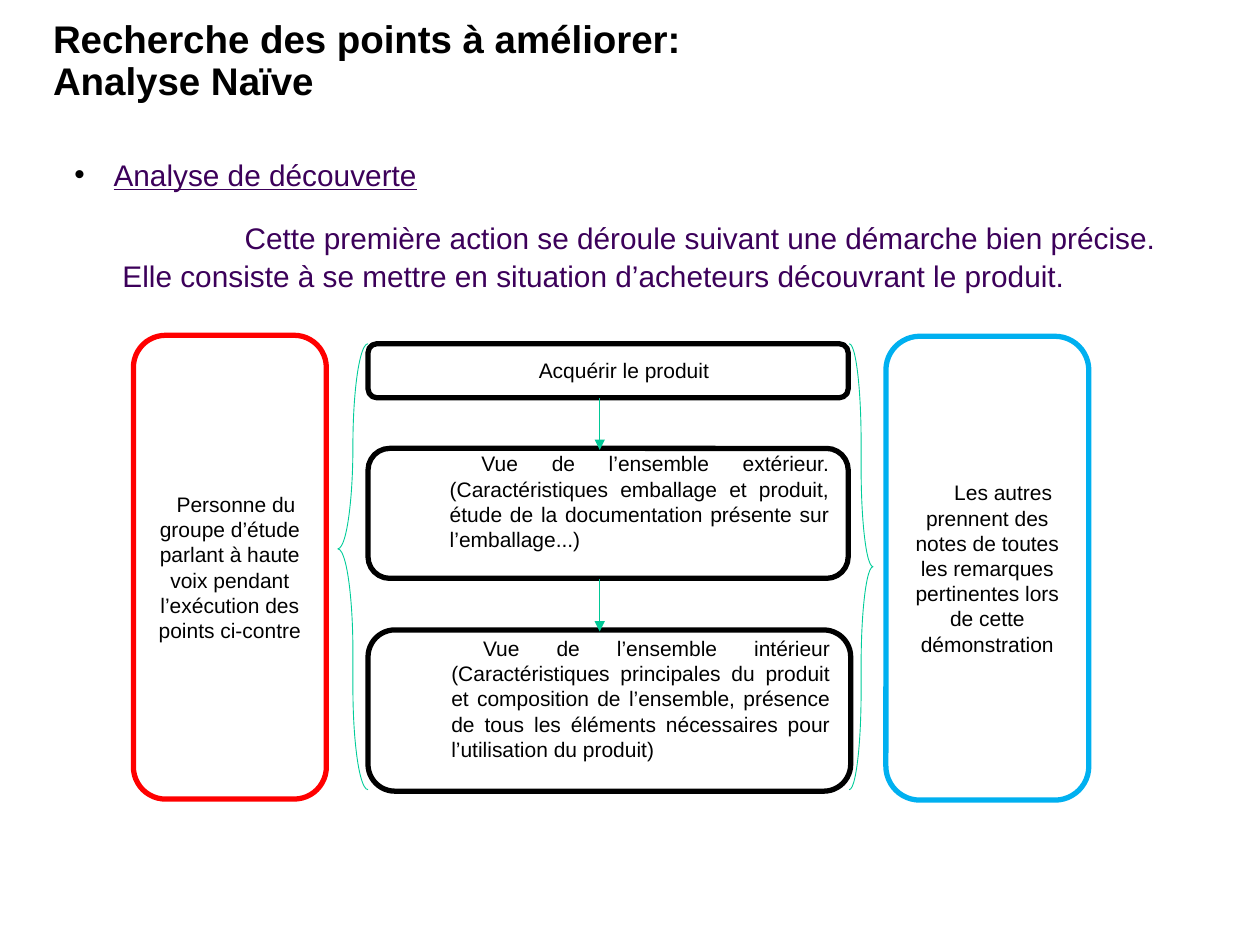
from dataclasses import dataclass
from typing import Any

from lxml import etree
from pptx import Presentation
from pptx.dml.color import RGBColor
from pptx.enum.shapes import MSO_CONNECTOR, MSO_SHAPE
from pptx.enum.text import MSO_ANCHOR, PP_ALIGN
from pptx.oxml.ns import qn
from pptx.util import Cm, Pt

ROUND = MSO_SHAPE.ROUNDED_RECTANGLE
LEFT_BRACE, RIGHT_BRACE = MSO_SHAPE.LEFT_BRACE, MSO_SHAPE.RIGHT_BRACE
STRAIGHT = MSO_CONNECTOR.STRAIGHT
TOP, MIDDLE = MSO_ANCHOR.TOP, MSO_ANCHOR.MIDDLE
LEFT, CENTER, JUSTIFY = PP_ALIGN.LEFT, PP_ALIGN.CENTER, PP_ALIGN.JUSTIFY


@dataclass(frozen=True)
class Theme:
    """Colours, type sizes and line widths of the slide."""
    font: str = "Arial"
    ink: str = "000000"
    paper: str = "FFFFFF"
    body: str = "3C005A"
    speaker: str = "FF0000"
    listeners: str = "00B0F0"
    brace: str = "00CC99"
    arrow: str = "00C896"
    title_pt: float = 22
    body_pt: float = 17
    box_pt: float = 12
    box_line: float = 3
    brace_line: float = 0.5
    arrow_line: float = 0.75


@dataclass(frozen=True)
class Area:
    """A rectangle in centimetres."""
    left: float
    top: float
    width: float
    height: float

    def lengths(self) -> list[Cm]:
        """Return the rectangle as slide lengths."""
        return [Cm(v) for v in (self.left, self.top, self.width, self.height)]


@dataclass(frozen=True)
class Box:
    """A rounded box with its text layout."""
    area: Area
    text: str
    line: str
    align: Any = CENTER
    margin: float = 0
    indent: float = 0.64
    bottom: float = 0.13


@dataclass(frozen=True)
class Brace:
    """A brace beside the steps."""
    kind: Any
    area: Area
    curl: float
    point: float


@dataclass(frozen=True)
class Arrow:
    """A vertical arrow between two steps."""
    x: float
    top: float
    bottom: float


T = Theme()
STEP_X, STEP_W, STEPS_TOP, STEPS_H = 7.42, 9.68, 6.93, 8.99
STEP_TEXT = dict(line=T.ink, align=JUSTIFY, margin=1.27, bottom=0.61)

BOXES = [
    Box(Area(STEP_X, STEPS_TOP, STEP_W, 1.09), "Acquérir le produit", T.ink),
    Box(Area(STEP_X, 9.04, STEP_W, 2.62),
        "Vue de l’ensemble extérieur. (Caractéristiques emballage et produit, "
        "étude de la documentation présente sur l’emballage...)", **STEP_TEXT),
    Box(Area(STEP_X, 12.7, 9.73, 3.25),
        "Vue de l’ensemble intérieur (Caractéristiques principales du produit et "
        "composition de l’ensemble, présence de tous les éléments nécessaires pour "
        "l’utilisation du produit)", **STEP_TEXT),
    Box(Area(2.69, 6.76, 3.89, 9.35),
        "Personne du groupe d’étude parlant à haute voix pendant l’exécution des "
        "points ci-contre", T.speaker, indent=0.25),
    Box(Area(17.86, 6.78, 4.09, 9.35),
        "Les autres prennent des notes de toutes les remarques pertinentes lors de "
        "cette démonstration", T.listeners),
]
BRACES = [
    Brace(LEFT_BRACE, Area(6.81, STEPS_TOP, 0.61, STEPS_H), 4.09, 0.46),
    Brace(RIGHT_BRACE, Area(17.12, STEPS_TOP, 0.48, STEPS_H), 4.15, 0.5),
]
ARROWS = [Arrow(12.09, 8.03, 9.07), Arrow(12.09, 11.68, 12.73)]


def apply(target: Any, values: dict[str, Any]) -> None:
    """Set each named attribute on the target."""
    for name, value in values.items():
        setattr(target, name, value)


def write(p: Any, text: str, size: float, color: str, layout: dict[str, Any],
          **style: Any) -> None:
    """Fill a paragraph with formatted text."""
    p.text = text
    apply(p, layout)
    for r in p.runs:
        apply(r.font, {"name": T.font, "size": Pt(size), **style})
        r.font.color.rgb = RGBColor.from_string(color)


def indent(p: Any, margin: float, first: float) -> None:
    """Set the left margin and first-line indent of a paragraph."""
    pPr = p._p.get_or_add_pPr()
    pPr.set("marL", str(Cm(margin)))
    pPr.set("indent", str(Cm(first)))


def add_bullet(p: Any) -> None:
    """Give a paragraph a round bullet in the ink colour."""
    pPr = p._p.get_or_add_pPr()
    color = etree.SubElement(pPr, qn("a:buClr"))
    etree.SubElement(color, qn("a:srgbClr"), val=T.ink)
    etree.SubElement(pPr, qn("a:buFont"), typeface=T.font)
    etree.SubElement(pPr, qn("a:buChar"), char="•")


def stroke(s: Any, color: str, width: float) -> None:
    """Set the line colour and width of a shape."""
    s.line.color.rgb = RGBColor.from_string(color)
    s.line.width = Pt(width)


def add_text(slide: Any, area: Area) -> Any:
    """Add a wrapping text box without insets and return its frame."""
    tf = slide.shapes.add_textbox(*area.lengths()).text_frame
    apply(tf, dict(word_wrap=True, vertical_anchor=TOP, margin_left=0,
                   margin_top=0, margin_right=0, margin_bottom=0))
    return tf


def add_box(slide: Any, box: Box) -> None:
    """Draw a rounded box with its text."""
    s = slide.shapes.add_shape(ROUND, *box.area.lengths())
    s.shadow.inherit = False
    s.fill.solid()
    s.fill.fore_color.rgb = RGBColor.from_string(T.paper)
    stroke(s, box.line, T.box_line)
    tf = s.text_frame
    apply(tf, dict(word_wrap=True, vertical_anchor=MIDDLE, margin_bottom=Cm(box.bottom)))
    p = tf.paragraphs[0]
    indent(p, box.margin, box.indent)
    write(p, box.text, T.box_pt, T.ink, {"alignment": box.align})


def add_brace(slide: Any, brace: Brace) -> None:
    """Draw an unfilled brace."""
    s = slide.shapes.add_shape(brace.kind, *brace.area.lengths())
    s.shadow.inherit = False
    s.fill.background()
    stroke(s, T.brace, T.brace_line)
    s.adjustments[0], s.adjustments[1] = brace.curl, brace.point


def add_arrow(slide: Any, arrow: Arrow) -> None:
    """Draw a downward arrow."""
    s = slide.shapes.add_connector(STRAIGHT, Cm(arrow.x), Cm(arrow.top),
                                   Cm(arrow.x), Cm(arrow.bottom))
    stroke(s, T.arrow, T.arrow_line)
    etree.SubElement(s.line._get_or_add_ln(), qn("a:tailEnd"), type="triangle")
    etree.SubElement(s._element.spPr, qn("a:effectLst"))


def main() -> None:
    """Build the slide and save it."""
    prs = Presentation()
    apply(prs, dict(slide_width=Cm(25.4), slide_height=Cm(19.05)))
    slide = prs.slides.add_slide(prs.slide_layouts[6])

    tf = add_text(slide, Area(1.07, 0.41, 17.75, 2.51))
    write(tf.paragraphs[0], "Recherche des points à améliorer:\vAnalyse Naïve",
          T.title_pt, T.ink, {"alignment": LEFT, "line_spacing": 0.9}, bold=True)

    tf = add_text(slide, Area(1.5, 3.12, 22.86, 13.21))
    p = tf.paragraphs[0]
    indent(p, 0.79, -0.79)
    add_bullet(p)
    write(p, "Analyse de découverte", T.body_pt, T.body, {"line_spacing": 1.05},
          underline=True)
    p = tf.add_paragraph()
    indent(p, 0.97, 2.46)
    write(p, "Cette première action se déroule suivant une démarche bien précise. "
          "Elle consiste à se mettre en situation d’acheteurs découvrant le produit.",
          T.body_pt, T.body, {"line_spacing": 1.05, "space_before": Pt(14.9)})

    for draw, items in ((add_box, BOXES), (add_brace, BRACES), (add_arrow, ARROWS)):
        for item in items:
            draw(slide, item)
    prs.save("out.pptx")


if __name__ == "__main__":
    main()
